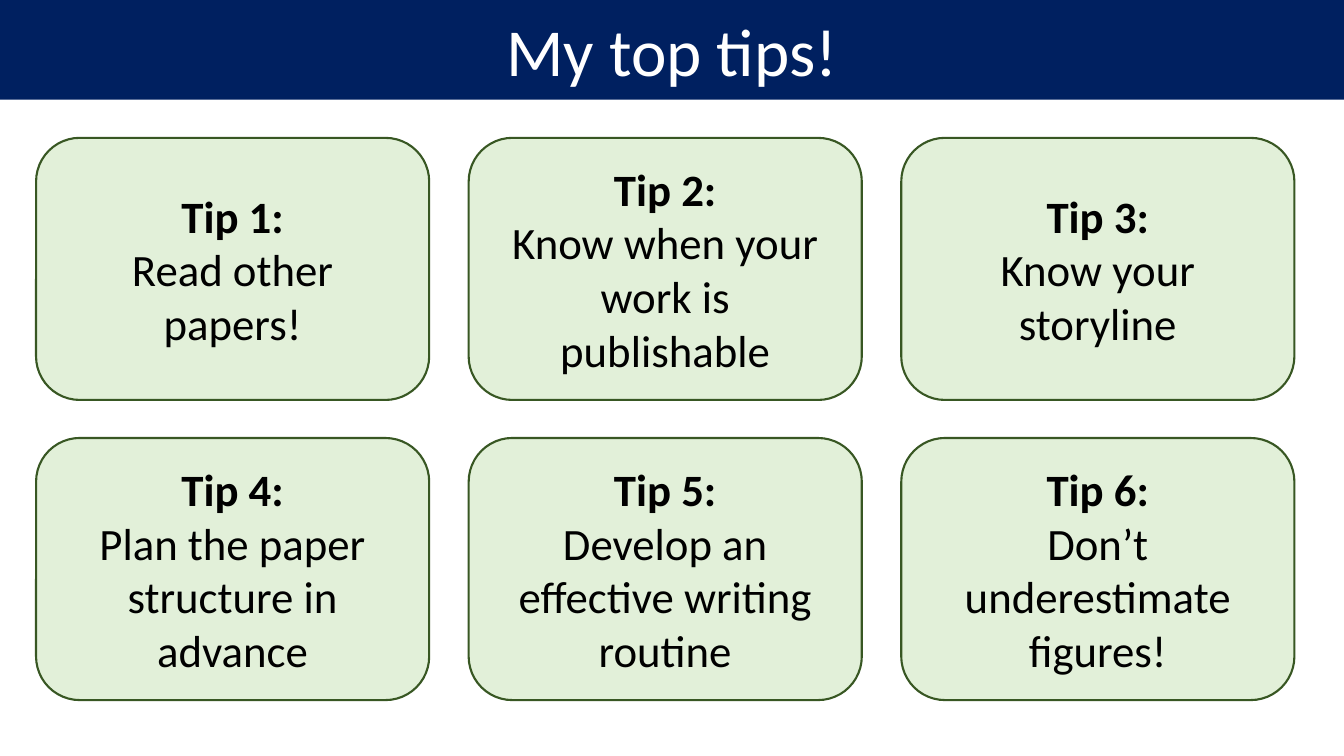
from pptx import Presentation
from pptx.dml.color import RGBColor
from pptx.enum.shapes import MSO_SHAPE as Preset
from pptx.enum.text import MSO_ANCHOR as Anchor, MSO_AUTO_SIZE as AutoSize, PP_ALIGN as Align
from pptx.util import Pt

TITLE = "My top tips!"
TIPS = [
    "Read other papers!",
    "Know when your work is publishable",
    "Know your storyline",
    "Plan the paper structure in advance",
    "Develop an effective writing routine",
    "Don’t underestimate figures!",
]

NAVY = RGBColor(0x00, 0x20, 0x60)
PALE_GREEN = RGBColor(0xE2, 0xF0, 0xD9)
DARK_GREEN = RGBColor(0x38, 0x57, 0x23)
WHITE = RGBColor(0xFF, 0xFF, 0xFF)
BLACK = RGBColor(0x00, 0x00, 0x00)

FONT = "Calibri"
PAGE_WIDTH, PAGE_HEIGHT = 960, 540
BANNER_HEIGHT = 71.2
COLUMNS = 3
CARD_LEFT, CARD_TOP = 25.8, 98.5
CARD_WIDTH, CARD_HEIGHT = 280.8, 187.2
COLUMN_GAP, ROW_GAP = 28.2, 27.2


def fill_shape(shape, color):
    shape.fill.solid()
    shape.fill.fore_color.rgb = color
    frame = shape.text_frame
    frame.word_wrap = True
    frame.auto_size = AutoSize.NONE
    frame.vertical_anchor = Anchor.MIDDLE
    return frame


def write(para, text, size, color, bold=False):
    para.alignment = Align.CENTER
    span = para.add_run()
    span.text = text
    span.font.name = FONT
    span.font.size = Pt(size)
    span.font.bold = bold
    span.font.color.rgb = color


def add_banner(page):
    banner = page.shapes.title
    banner.left, banner.top = Pt(0), Pt(0)
    banner.width, banner.height = Pt(PAGE_WIDTH), Pt(BANNER_HEIGHT)
    frame = fill_shape(banner, NAVY)
    write(frame.paragraphs[0], TITLE, 48, WHITE)


def add_card(page, index, tip):
    row, column = divmod(index, COLUMNS)
    left = CARD_LEFT + column * (CARD_WIDTH + COLUMN_GAP)
    top = CARD_TOP + row * (CARD_HEIGHT + ROW_GAP)
    card = page.shapes.add_shape(
        Preset.ROUNDED_RECTANGLE, Pt(left), Pt(top), Pt(CARD_WIDTH), Pt(CARD_HEIGHT)
    )
    card.shadow.inherit = False
    card.line.color.rgb = DARK_GREEN
    card.line.width = Pt(1.5)
    frame = fill_shape(card, PALE_GREEN)
    write(frame.paragraphs[0], f"Tip {index + 1}:", 32, BLACK, bold=True)
    write(frame.add_paragraph(), tip, 32, BLACK)


def main():
    deck = Presentation()
    deck.slide_width, deck.slide_height = Pt(PAGE_WIDTH), Pt(PAGE_HEIGHT)
    page = deck.slides.add_slide(deck.slide_layouts.get_by_name("Title Only"))
    add_banner(page)
    for index, tip in enumerate(TIPS):
        add_card(page, index, tip)
    deck.save("out.pptx")


if __name__ == "__main__":
    main()
